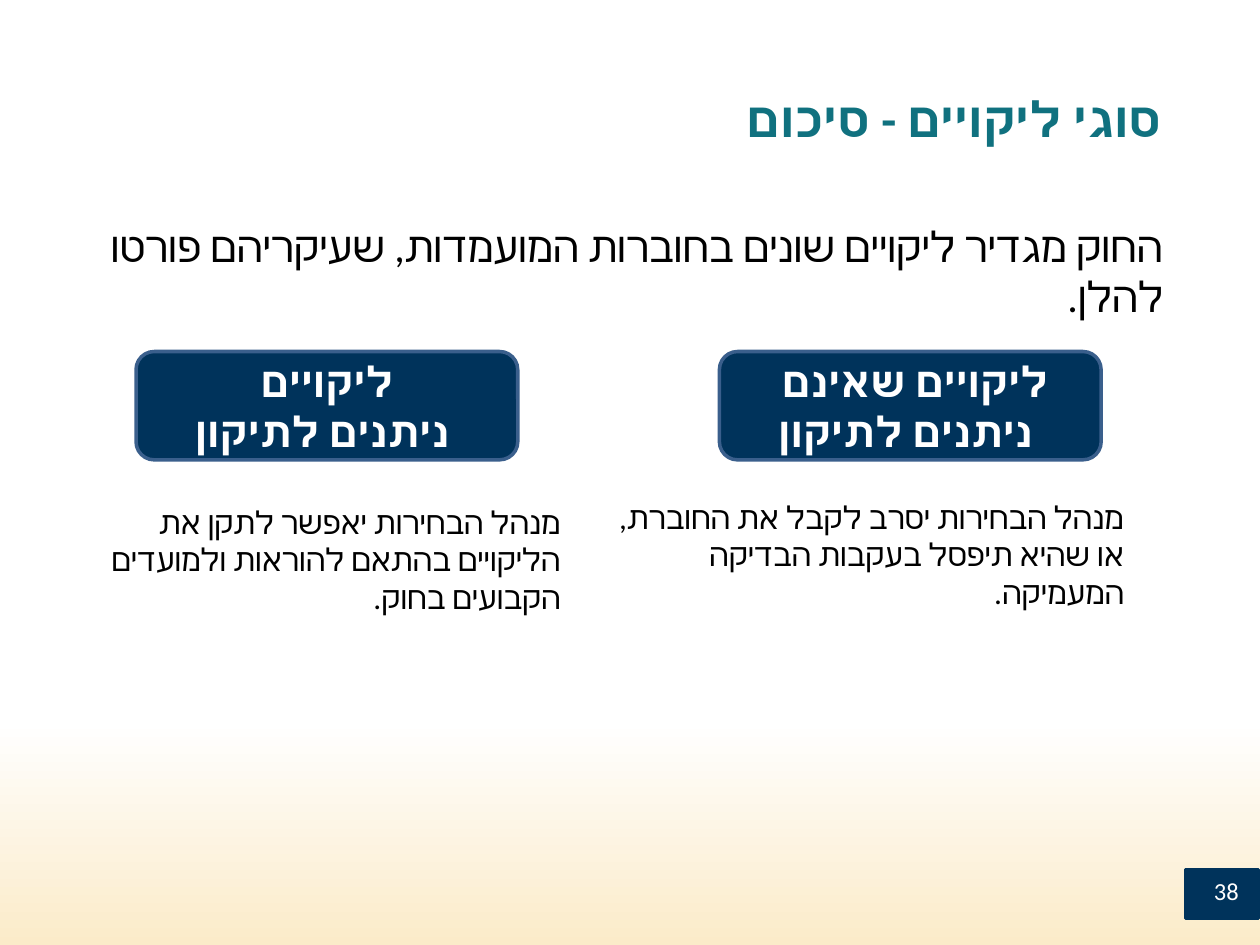
from dataclasses import dataclass
from typing import Optional

from lxml.etree import SubElement
from pptx import Presentation
from pptx.dml.color import RGBColor
from pptx.enum.shapes import MSO_SHAPE as Preset
from pptx.enum.text import MSO_ANCHOR as Anchor, PP_ALIGN as Align
from pptx.oxml.ns import qn
from pptx.util import Inches, Pt

WHITE = RGBColor(0xFF, 0xFF, 0xFF)
BLACK = RGBColor(0, 0, 0)
NAVY = RGBColor(0x00, 0x33, 0x5B)
OUTLINE = RGBColor(0x3A, 0x5F, 0x8C)
TEAL = RGBColor(0x10, 0x71, 0x7F)
SAND = RGBColor(0xFB, 0xEB, 0xC9)

FONT = "Calibri"
WIDTH, HEIGHT = Inches(10), Inches(7.5)
COLUMNS, ROWS = 100, 75  # square grid cells


@dataclass(frozen=True)
class Area:
    """A place on the grid, in columns and rows."""
    column: float
    row: float
    columns: float
    rows: float

    def lengths(self) -> tuple:
        across, down = WIDTH / COLUMNS, HEIGHT / ROWS
        return (round(self.column * across), round(self.row * down),
                round(self.columns * across), round(self.rows * down))


@dataclass(frozen=True)
class TextStyle:
    size: int
    color: RGBColor
    bold: bool = False
    align: Align = Align.RIGHT
    anchor: Anchor = Anchor.TOP
    right_to_left: bool = True


@dataclass(frozen=True)
class DefectKind:
    heading: str
    heading_area: Area
    explanation: str
    explanation_area: Area


TITLE = TextStyle(28, TEAL, bold=True, anchor=Anchor.MIDDLE)
BODY = TextStyle(24, BLACK)
HEADING = TextStyle(24, WHITE, bold=True, align=Align.CENTER,
                    anchor=Anchor.MIDDLE, right_to_left=False)
EXPLANATION = TextStyle(18, BLACK)
PAGE_NUMBER = TextStyle(14, WHITE)

DEFECT_KINDS = (
    DefectKind("ליקויים שאינם \vניתנים לתיקון ", Area(57.1, 27.9, 30.3, 8.6),
               "מנהל הבחירות יסרב לקבל את החוברת, \v"
               "או שהיא תיפסל בעקבות הבדיקה המעמיקה. ",
               Area(45.1, 39, 45.1, 7.1)),
    DefectKind("ליקויים\vניתנים לתיקון ", Area(10.8, 27.9, 30.3, 8.6),
               "מנהל הבחירות יאפשר לתקן את הליקויים "
               "בהתאם להוראות ולמועדים הקבועים בחוק.",
               Area(3.8, 39.4, 41.7, 7.1)),
)


def write_text(shape, text: str, style: TextStyle) -> None:
    frame = shape.text_frame
    frame.word_wrap = True
    frame.vertical_anchor = style.anchor
    paragraph = frame.paragraphs[0]
    paragraph.text = text
    paragraph.alignment = style.align
    if style.right_to_left:
        paragraph._p.get_or_add_pPr().set("rtl", "1")
    font_values = {"name": FONT, "size": Pt(style.size), "bold": style.bold}
    for run in paragraph.runs:
        for name, value in font_values.items():
            setattr(run.font, name, value)
        run.font.color.rgb = style.color
        # Hebrew takes the complex-script typeface
        SubElement(run.font._element, qn("a:cs"), typeface=FONT)


def add_text(slide, area: Area, text: str, style: TextStyle) -> None:
    write_text(slide.shapes.add_textbox(*area.lengths()), text, style)


def add_panel(slide, preset: Preset, area: Area,
              fill: Optional[RGBColor] = None, line: Optional[RGBColor] = None):
    shape = slide.shapes.add_shape(preset, *area.lengths())
    shape.shadow.inherit = False
    if fill is not None:
        shape.fill.solid()
        shape.fill.fore_color.rgb = fill
    if line is None:
        shape.line.fill.background()
    else:
        shape.line.color.rgb = line
        shape.line.width = Pt(2)
    return shape


def add_bottom_glow(slide) -> None:
    glow = add_panel(slide, Preset.RECTANGLE, Area(0, 57.2, COLUMNS, 17.8))
    glow.fill.gradient()
    glow.fill.gradient_angle = 90
    for stop, color in zip(glow.fill.gradient_stops, (SAND, WHITE)):
        stop.color.rgb = color


def add_defect_kind(slide, kind: DefectKind) -> None:
    heading = add_panel(slide, Preset.ROUNDED_RECTANGLE, kind.heading_area,
                        NAVY, OUTLINE)
    write_text(heading, kind.heading, HEADING)
    add_text(slide, kind.explanation_area, kind.explanation, EXPLANATION)


def main() -> None:
    presentation = Presentation()
    presentation.slide_width, presentation.slide_height = WIDTH, HEIGHT
    slide = presentation.slides.add_slide(presentation.slide_layouts[6])

    add_bottom_glow(slide)
    add_panel(slide, Preset.RECTANGLE, Area(94.1, 69, 5.8, 3.9), NAVY, NAVY)
    add_text(slide, Area(94.1, 69, 5.2, 3.1), "38", PAGE_NUMBER)
    add_text(slide, Area(23.4, 2.1, 69.8, 14.5), "סוגי ליקויים - סיכום", TITLE)
    add_text(slide, Area(3.5, 17, 89.8, 55.1),
             "החוק מגדיר ליקויים שונים בחוברות המועמדות, שעיקריהם פורטו להלן.",
             BODY)
    for kind in DEFECT_KINDS:
        add_defect_kind(slide, kind)

    presentation.save("out.pptx")


if __name__ == "__main__":
    main()
